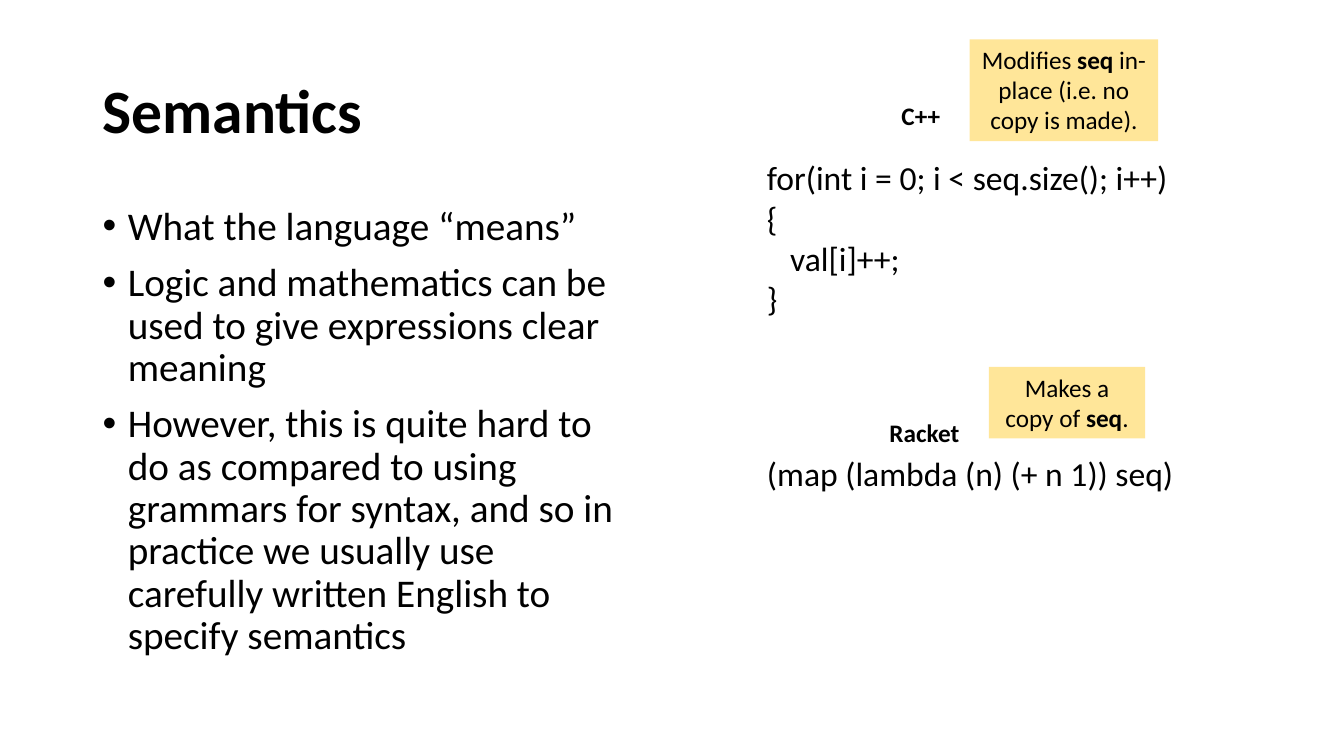
from lxml.etree import SubElement
from pptx import Presentation
from pptx.dml.color import RGBColor
from pptx.enum.shapes import MSO_SHAPE
from pptx.enum.text import MSO_ANCHOR, MSO_AUTO_SIZE, PP_ALIGN
from pptx.oxml.ns import qn
from pptx.util import Inches, Pt

BLACK = RGBColor(0x00, 0x00, 0x00)
NOTE_YELLOW = RGBColor(0xFF, 0xE6, 0x99)


class SlideBuilder:
    """Holds the deck, its style and the current slide; places are percentages of the slide."""

    font_name = "Calibri"
    title_size, body_size, code_size, small_size = Pt(44), Pt(28), Pt(24), Pt(18)

    def __init__(self):
        self.deck = Presentation()
        self.deck.slide_width, self.deck.slide_height = Inches(13.33), Inches(7.5)
        self.slide = self.deck.slides.add_slide(self.deck.slide_layouts[5])

    def place(self, left, top, width, height):
        """Turn percentages of the slide into lengths."""
        across, down = self.deck.slide_width / 100, self.deck.slide_height / 100
        return int(left * across), int(top * down), int(width * across), int(height * down)

    def fill_text(self, frame, lines, size, align=PP_ALIGN.LEFT, bold=False,
                  anchor=MSO_ANCHOR.TOP):
        """Fill a text frame; words between asterisks turn bold."""
        frame.word_wrap = True
        frame.auto_size = MSO_AUTO_SIZE.NONE
        frame.vertical_anchor = anchor
        for number, line in enumerate(lines):
            paragraph = frame.add_paragraph() if number else frame.paragraphs[0]
            paragraph.alignment = align
            paragraph.font.name, paragraph.font.size = self.font_name, size
            paragraph.font.bold = bold
            paragraph.font.color.rgb = BLACK
            for part, words in enumerate(line.split("*")):
                run = paragraph.add_run()
                run.text = words
                if part % 2:
                    run.font.bold = True
        return frame.paragraphs

    def text(self, place, lines, size, **style):
        """Add a text box."""
        box = self.slide.shapes.add_textbox(*self.place(*place))
        return self.fill_text(box.text_frame, lines, size, **style)

    def title(self, place, words):
        """Move and format the title placeholder."""
        heading = self.slide.shapes.title
        heading.left, heading.top, heading.width, heading.height = self.place(*place)
        paragraphs = self.fill_text(heading.text_frame, [words], self.title_size,
                                    bold=True, anchor=MSO_ANCHOR.MIDDLE)
        paragraphs[0].line_spacing = 0.9

    def indent(self, paragraph, margin, first=0.0):
        """Set the left margin and first-line indent in inches."""
        properties = paragraph._p.get_or_add_pPr()
        properties.set("marL", str(Inches(margin)))
        properties.set("indent", str(Inches(first)))
        return properties

    def bullets(self, place, lines):
        """Add a bulleted list."""
        for paragraph in self.text(place, lines, self.body_size):
            paragraph.line_spacing = 0.9
            paragraph.space_before = Pt(10)
            properties = self.indent(paragraph, 0.25, -0.25)
            bullet_font = SubElement(properties, qn("a:buFont"), typeface="Arial")
            bullet = SubElement(properties, qn("a:buChar"), char="•")
            defaults = properties.find(qn("a:defRPr"))
            defaults.addprevious(bullet_font)
            defaults.addprevious(bullet)

    def code(self, place, lines, nested=()):
        """Add a code sample whose nested line numbers are indented."""
        paragraphs = self.text(place, lines, self.code_size)
        for number in nested:
            self.indent(paragraphs[number], 0.23)

    def language(self, place, name):
        """Add the bold name of a language."""
        self.text(place, [name], self.small_size, align=PP_ALIGN.CENTER, bold=True)

    def note(self, place, words):
        """Add a yellow note."""
        card = self.slide.shapes.add_shape(MSO_SHAPE.RECTANGLE, *self.place(*place))
        card.shadow.inherit = False
        card.fill.solid()
        card.fill.fore_color.rgb = NOTE_YELLOW
        card.line.fill.background()
        self.fill_text(card.text_frame, [words], self.small_size, align=PP_ALIGN.CENTER)


def main():
    """Build the semantics slide."""
    semantics = SlideBuilder()
    semantics.title((6.9, 5.33, 86.25, 19.33), "Semantics")
    semantics.bullets((6.9, 26.67, 39.68, 63.47), [
        "What the language “means”",
        "Logic and mathematics can be used to give expressions clear meaning",
        "However, this is quite hard to do as compared to using grammars for syntax, "
        "and so in practice we usually use carefully written English to specify semantics",
    ])
    code_left = 56.33
    semantics.code((code_left, 20.13, 31.58, 22.93),
                   ["for(int i = 0; i < seq.size(); i++) {", "val[i]++;", "}"], nested=[1])
    semantics.code((code_left, 59.2, 32.03, 6.67), ["(map (lambda (n) (+ n 1)) seq)"])
    semantics.language((65.7, 12.67, 5.63, 5.33), "C++")
    semantics.language((64.5, 54.53, 8.55, 5.33), "Racket")
    semantics.note((72.15, 5.2, 14.03, 13.47),
                   "Modifies *seq* in-place (i.e. no copy is made).")
    semantics.note((73.58, 48.53, 11.63, 9.47), "Makes a copy of *seq*.")
    semantics.deck.save("out.pptx")


if __name__ == "__main__":
    main()
